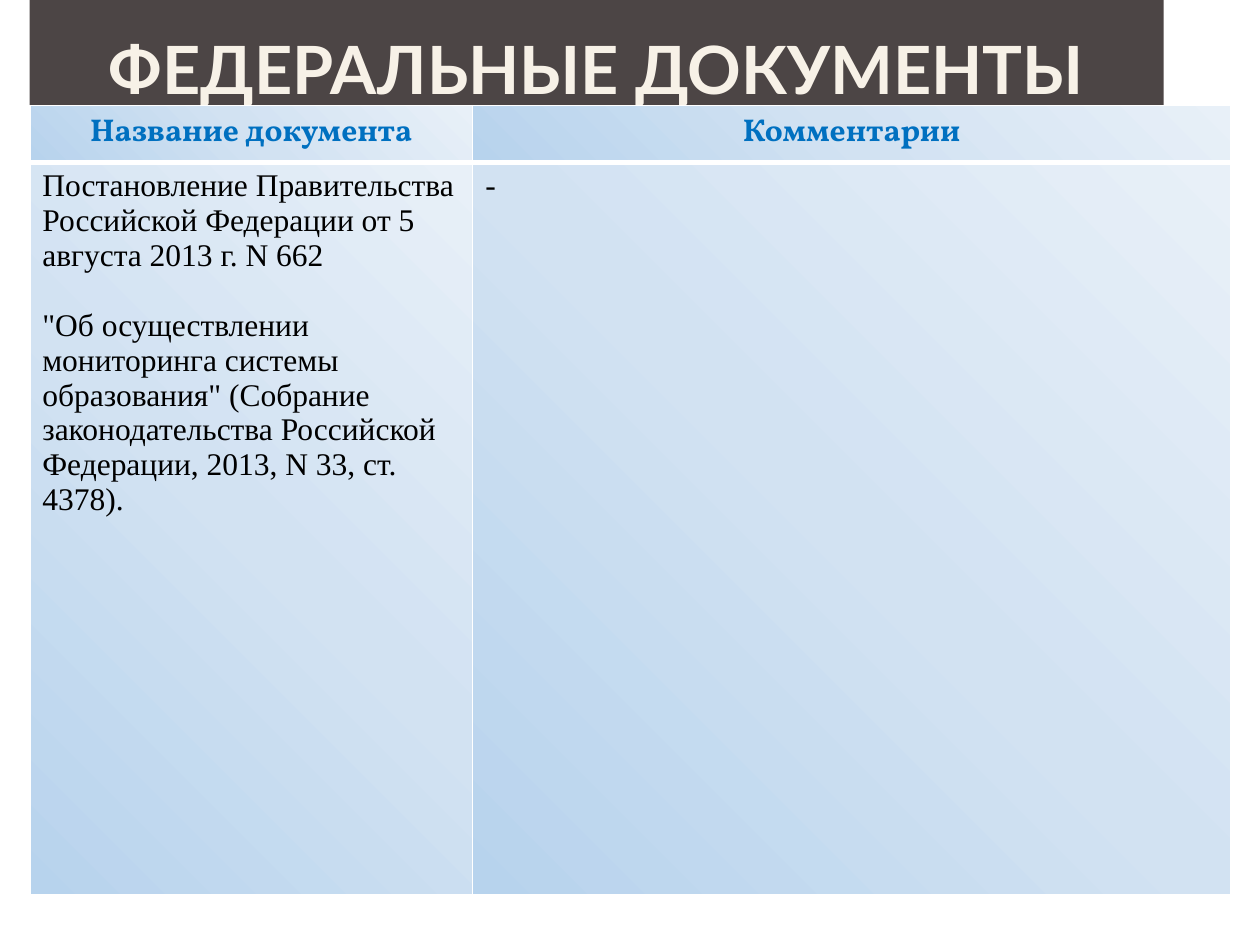
"""Build a slide with a title band and a two-column table of federal documents."""
from dataclasses import dataclass

from lxml import etree
from pptx import Presentation
from pptx.dml.color import RGBColor
from pptx.enum.shapes import MSO_SHAPE
from pptx.enum.text import MSO_ANCHOR, PP_ALIGN
from pptx.oxml.ns import qn
from pptx.util import Cm, Pt

RECTANGLE = MSO_SHAPE.RECTANGLE
BOTTOM = MSO_ANCHOR.BOTTOM
CENTER = PP_ALIGN.CENTER
LEFT = PP_ALIGN.LEFT


@dataclass(frozen=True)
class TextStyle:
    font: str
    size: int
    color: str
    bold: bool
    alignment: PP_ALIGN


@dataclass(frozen=True)
class Theme:
    band: str = "4C4545"
    border: str = "FFFFFF"
    gradient: tuple = ((0, "B7D3ED"), (50, "D2E2F2"), (100, "E8F0F8"))
    thin: int = 1
    thick: int = 3
    paragraph_gap: int = 20
    title: TextStyle = TextStyle("Lato", 38, "F7F1E7", True, CENTER)
    header: TextStyle = TextStyle("Vollkorn", 18, "0070C0", True, CENTER)
    body: TextStyle = TextStyle("Times New Roman", 18, "000000", False, LEFT)


class SlideBuilder:
    def __init__(self, slide, theme):
        self.slide = slide
        self.theme = theme

    def set_text(self, text_frame, text, style):
        text_frame.text = text
        for index, paragraph in enumerate(text_frame.paragraphs):
            paragraph.alignment = style.alignment
            if index:
                paragraph.space_before = Pt(self.theme.paragraph_gap)
            for run in paragraph.runs:
                run.font.name = style.font
                run.font.size = Pt(style.size)
                run.font.bold = style.bold
                run.font.color.rgb = RGBColor.from_string(style.color)

    def title_band(self, text, left, top, width, height):
        shape = self.slide.shapes.add_shape(
            RECTANGLE, Cm(left), Cm(top), Cm(width), Cm(height))
        shape.shadow.inherit = False
        shape.fill.solid()
        shape.fill.fore_color.rgb = RGBColor.from_string(self.theme.band)
        shape.line.fill.background()
        text_frame = shape.text_frame
        text_frame.word_wrap = True
        text_frame.vertical_anchor = BOTTOM
        text_frame.margin_left = text_frame.margin_right = Cm(0.13)
        text_frame.margin_top = text_frame.margin_bottom = 0
        self.set_text(text_frame, text, self.theme.title)

    def add_color(self, parent, color):
        etree.SubElement(parent, qn("a:srgbClr"), val=color)

    def cell_borders(self, cell, widths):
        properties = cell._tc.get_or_add_tcPr()
        for side, width in widths.items():
            line = etree.SubElement(properties, qn(f"a:ln{side}"), w=str(Pt(width)))
            self.add_color(etree.SubElement(line, qn("a:solidFill")), self.theme.border)

    def cell_gradient(self, cell):
        properties = cell._tc.get_or_add_tcPr()
        gradient = etree.SubElement(properties, qn("a:gradFill"), rotWithShape="1")
        stops = etree.SubElement(gradient, qn("a:gsLst"))
        for position, color in self.theme.gradient:
            stop = etree.SubElement(stops, qn("a:gs"), pos=str(position * 1000))
            self.add_color(stop, color)
        circle = etree.SubElement(gradient, qn("a:path"), path="circle")
        etree.SubElement(circle, qn("a:fillToRect"), t="100000", r="100000")

    def table(self, rows, left, top, column_widths, row_heights):
        theme = self.theme
        table = self.slide.shapes.add_table(
            len(rows), len(column_widths), Cm(left), Cm(top),
            Cm(sum(column_widths)), Cm(sum(row_heights))).table
        table.first_row = table.horz_banding = False
        for column, width in zip(table.columns, column_widths):
            column.width = Cm(width)
        for row_index, (row, height) in enumerate(zip(table.rows, row_heights)):
            row.height = Cm(height)
            is_header = row_index == 0
            widths = {
                "L": theme.thin,
                "R": theme.thin,
                "T": theme.thin if is_header else theme.thick,
                "B": theme.thick if is_header else theme.thin,
            }
            for cell, text in zip(row.cells, rows[row_index]):
                self.set_text(cell.text_frame, text, theme.header if is_header else theme.body)
                self.cell_borders(cell, widths)
                self.cell_gradient(cell)


def main():
    presentation = Presentation()
    presentation.slide_width = Cm(25.4)
    presentation.slide_height = Cm(19.05)
    slide = presentation.slides.add_slide(presentation.slide_layouts[6])
    builder = SlideBuilder(slide, Theme())
    builder.title_band("ФЕДЕРАЛЬНЫЕ ДОКУМЕНТЫ", 0.6, 0, 22.86, 2.18)
    document = (
        "Постановление Правительства Российской Федерации от 5 августа 2013 г. N 662\n"
        '"Об осуществлении мониторинга системы образования" (Собрание '
        "законодательства Российской Федерации, 2013, N 33, ст. 4378).")
    rows = [("Название документа", "Комментарии"), (document, "-")]
    builder.table(rows, 0.6, 2.13, (8.93, 15.28), (1.02, 14.76))
    presentation.save("out.pptx")


if __name__ == "__main__":
    main()
